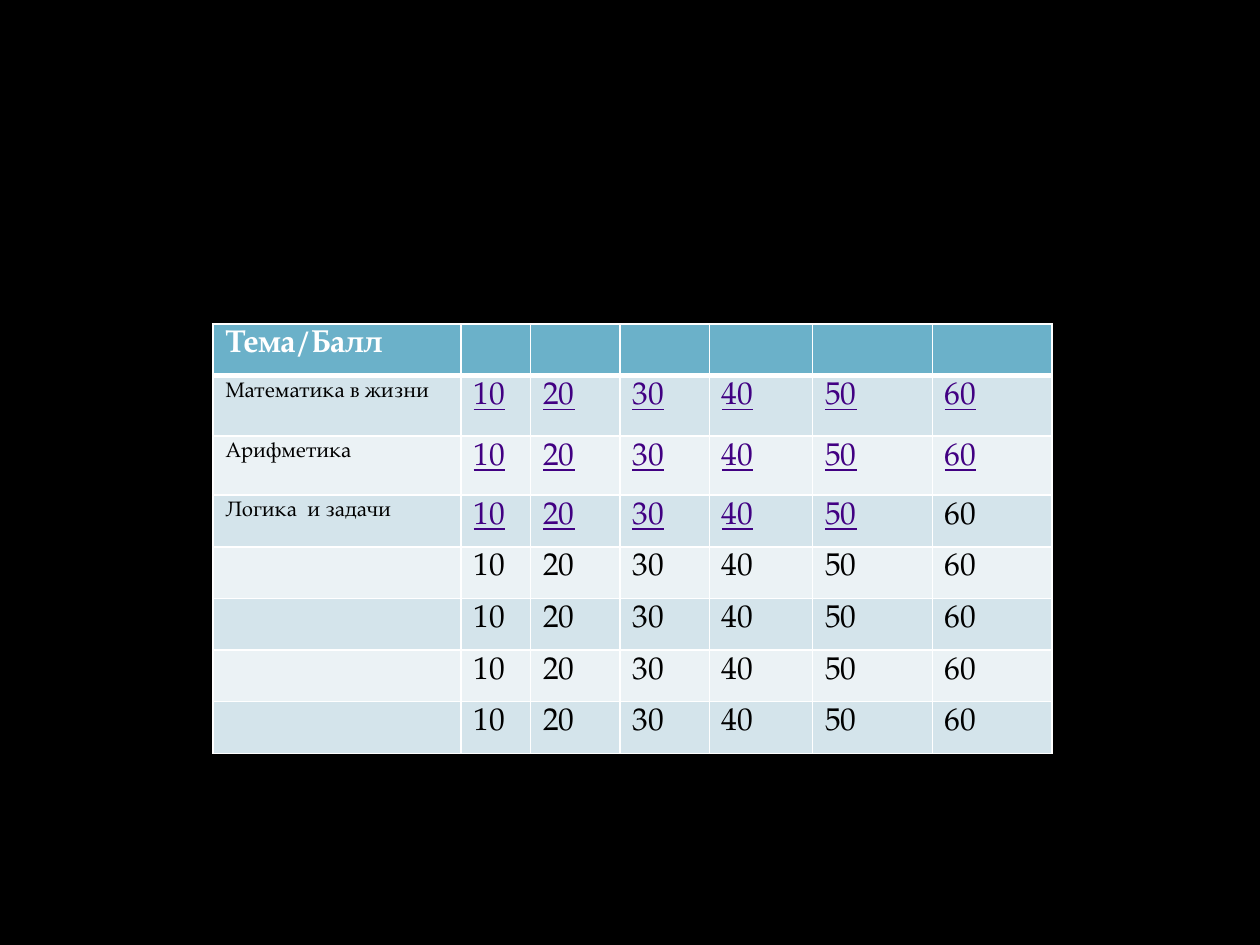
from lxml import etree
from pptx import Presentation
from pptx.dml.color import RGBColor
from pptx.oxml.ns import qn
from pptx.util import Inches, Pt

BLANK_LAYOUT = 6
FONT = "TeX Gyre Pagella"
BLACK, WHITE, LINK = "000000", "FFFFFF", "410082"
HEADER_FILL = "6BB1C9"
BAND_FILLS = ("D4E4EB", "EBF2F5")

COLUMN_WIDTHS = (1.97, 0.55, 0.71, 0.71, 0.82, 0.95, 0.95)
ROW_HEIGHTS = (0.41, 0.48, 0.47) + (0.41,) * 5
POINTS = (10, 20, 30, 40, 50, 60)
# Topic and how many of its scores are marked as links
TOPICS = (("Математика в жизни", 6), ("Арифметика", 6), ("Логика  и задачи", 5)) + (("", 0),) * 4


def rgb(color):
    return RGBColor.from_string(color)


def write(tf, text, size=18, color=BLACK, bold=False, underline=False):
    r = tf.paragraphs[0].add_run()
    r.text = text
    r.font.name = FONT
    r.font.size = Pt(size)
    r.font.bold = bold
    r.font.underline = underline
    r.font.color.rgb = rgb(color)


def set_borders(cell, top=1, bottom=1):
    """Draw white lines round the cell, with widths in points."""
    tc_pr = cell._tc.get_or_add_tcPr()
    for side, width in (("L", 1), ("R", 1), ("T", top), ("B", bottom)):
        ln = etree.SubElement(tc_pr, qn(f"a:ln{side}"), w=str(Pt(width)))
        fill = etree.SubElement(ln, qn("a:solidFill"))
        etree.SubElement(fill, qn("a:srgbClr"), val=WHITE)


class Deck:
    def __init__(self, width, height):
        self.prs = Presentation()
        self.prs.slide_width = Inches(width)
        self.prs.slide_height = Inches(height)
        self.s = None

    def add_slide(self, background):
        self.s = self.prs.slides.add_slide(self.prs.slide_layouts[BLANK_LAYOUT])
        fill = self.s.background.fill
        fill.solid()
        fill.fore_color.rgb = rgb(background)

    def add_table(self, left, top, widths, heights):
        """Add a table with a header row and banded body rows."""
        table = self.s.shapes.add_table(
            len(heights), len(widths), Inches(left), Inches(top),
            Inches(sum(widths)), Inches(sum(heights))).table
        for column, width in zip(table.columns, widths):
            column.width = Inches(width)
        for i, (row, height) in enumerate(zip(table.rows, heights)):
            row.height = Inches(height)
            for cell in row.cells:
                set_borders(cell, top=3 if i == 1 else 1, bottom=3 if i == 0 else 1)
                cell.fill.solid()
                cell.fill.fore_color.rgb = rgb(BAND_FILLS[(i - 1) % 2] if i else HEADER_FILL)
        return table


def main():
    deck = Deck(10, 7.5)
    deck.add_slide(BLACK)
    table = deck.add_table(1.69, 2.57, COLUMN_WIDTHS, ROW_HEIGHTS)
    write(table.cell(0, 0).text_frame, "Тема/Балл", color=WHITE, bold=True)
    for row, (topic, links) in enumerate(TOPICS, start=1):
        if topic:
            write(table.cell(row, 0).text_frame, topic, size=12)
        for col, points in enumerate(POINTS, start=1):
            linked = col <= links
            write(table.cell(row, col).text_frame, str(points),
                  color=LINK if linked else BLACK, underline=linked)
    deck.prs.save("out.pptx")


if __name__ == "__main__":
    main()
